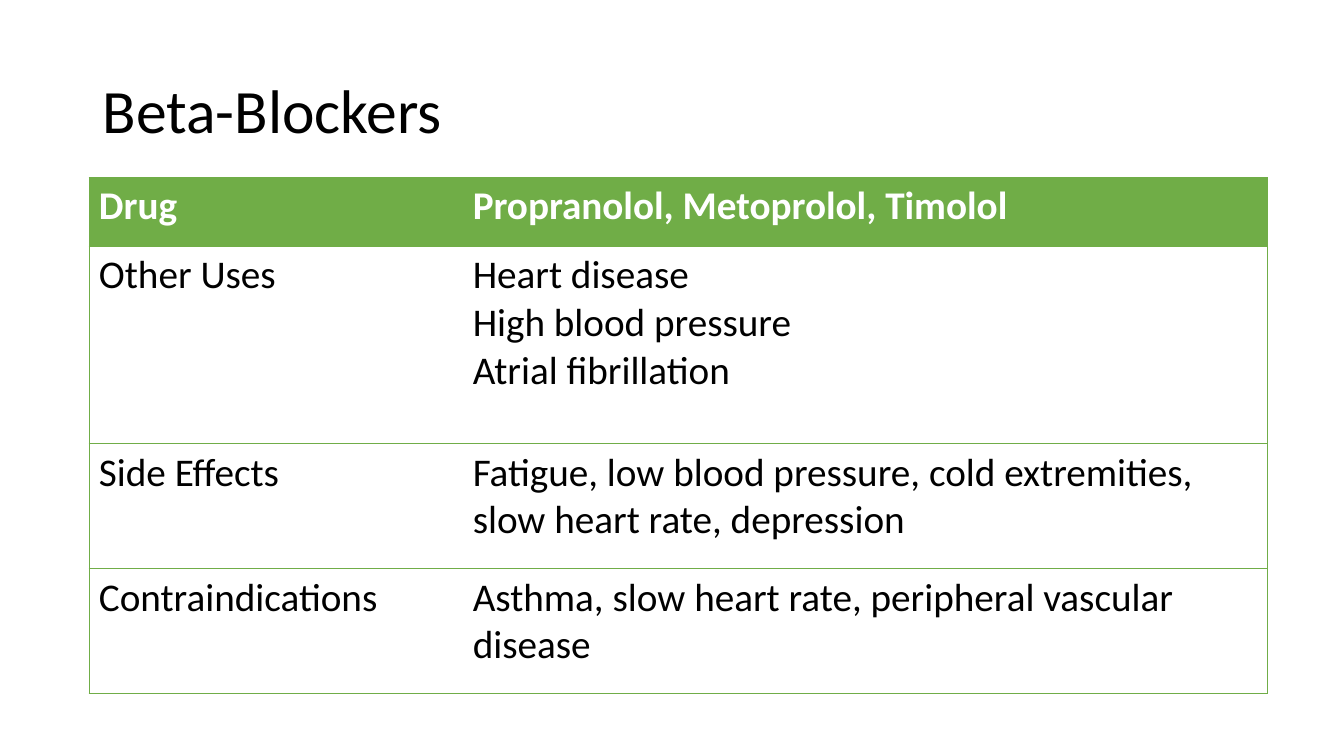
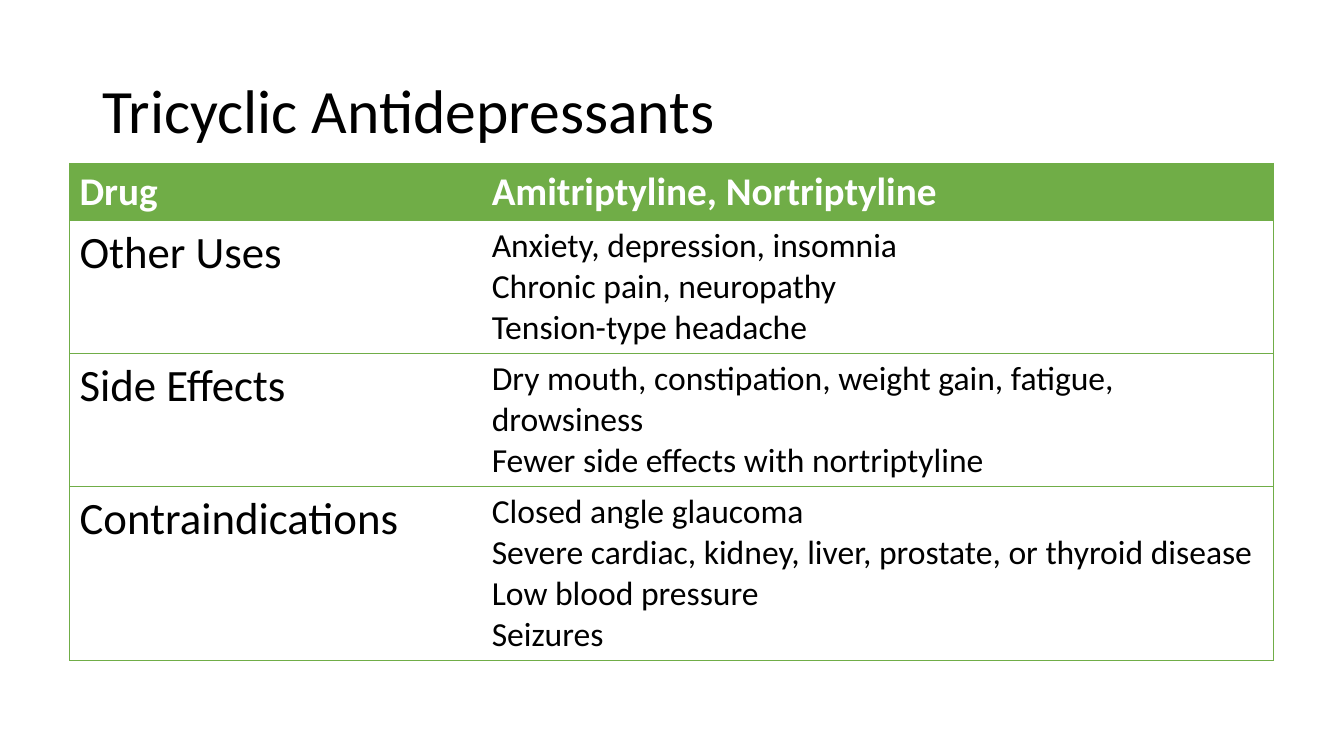
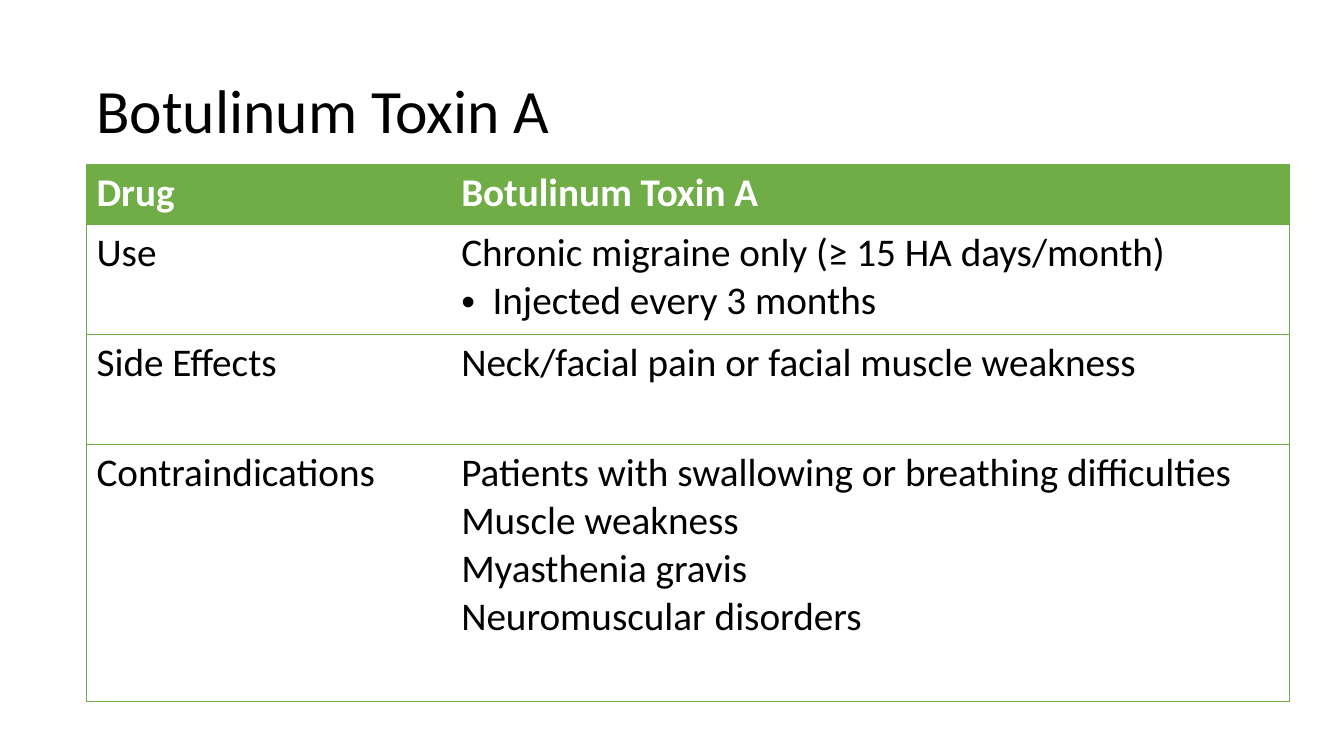
"""Build three slides on preventive migraine drugs, each a title over a two-column table."""
from lxml import etree
from pptx import Presentation, util as u
from pptx.dml.color import RGBColor
from pptx.enum import text
from pptx.oxml.ns import qn

COLORS = {"green": "70AD47", "black": "000000", "white": "FFFFFF"}
FONT = "Calibri"
BULLET = "•"

DRUG_SLIDES = [
    dict(
        title="Beta-Blockers", title_left=2.34, corner=(2.24, 4.47),
        widths=(9.42, 20.29), heights=(1.73, 4.98, 3.15, 3.15),
        rows=[
            ("Drug", ["Propranolol, Metoprolol, Timolol"]),
            ("Other Uses", ["Heart disease", "High blood pressure", "Atrial fibrillation"]),
            ("Side Effects", ["Fatigue, low blood pressure, cold extremities, slow heart rate, depression"]),
            ("Contraindications", ["Asthma, slow heart rate, peripheral vascular disease"]),
        ],
    ),
    dict(
        title="Tricyclic Antidepressants", title_left=2.34, corner=(1.75, 4.11),
        widths=(10.39, 19.94), heights=(1.45, 3.35, 3.35, 4.39),
        label_size=32, detail_size=24,
        rows=[
            ("Drug", ["Amitriptyline, Nortriptyline"]),
            ("Other Uses", ["Anxiety, depression, insomnia", "Chronic pain, neuropathy",
                            "Tension-type headache"]),
            ("Side Effects", ["Dry mouth, constipation, weight gain, fatigue, drowsiness",
                              "Fewer side effects with nortriptyline"]),
            ("Contraindications", ["Closed angle glaucoma",
                                   "Severe cardiac, kidney, liver, prostate, or thyroid disease",
                                   "Low blood pressure", "Seizures"]),
        ],
    ),
    dict(
        title="Botulinum Toxin A", title_left=2.18, corner=(2.18, 4.14),
        widths=(9.19, 21.11), heights=(1.52, 2.77, 2.77, 6.48),
        rows=[
            ("Drug", ["Botulinum Toxin A"]),
            ("Use", ["Chronic migraine only (≥ 15 HA days/month)", "•Injected every 3 months"]),
            ("Side Effects", ["Neck/facial pain or facial muscle weakness"]),
            ("Contraindications", ["Patients with swallowing or breathing difficulties", "Muscle weakness",
                                   "Myasthenia gravis", "Neuromuscular disorders"]),
        ],
    ),
]


def add_bullet(paragraph):
    properties = paragraph._p.get_or_add_pPr()
    indent = u.Cm(0.79)
    properties.set("marL", str(indent))
    properties.set("indent", str(-indent))
    etree.SubElement(properties, qn("a:buFont"), typeface="Arial")
    etree.SubElement(properties, qn("a:buChar"), char=BULLET)


def write(frame, lines, size=28, color="black", bold=False, spacing=None):
    for index, line in enumerate(lines):
        paragraph = frame.add_paragraph() if index else frame.paragraphs[0]
        if spacing:
            paragraph.line_spacing = spacing
        if line.startswith(BULLET):
            add_bullet(paragraph)
        run = paragraph.add_run()
        run.text = line.removeprefix(BULLET)
        run.font.name = FONT
        run.font.size = u.Pt(size)
        run.font.bold = bold
        run.font.color.rgb = RGBColor.from_string(COLORS[color])


def set_borders(cell, visible_edges):
    properties = cell._tc.get_or_add_tcPr()
    for position, edge in enumerate("LRTB"):
        border = etree.Element(qn(f"a:ln{edge}"), w=str(u.Pt(0.5)))
        if edge in visible_edges:
            fill = etree.SubElement(border, qn("a:solidFill"))
            etree.SubElement(fill, qn("a:srgbClr"), val=COLORS["green"])
        else:
            etree.SubElement(border, qn("a:noFill"))
        properties.insert(position, border)


def fill_cell(cell, lines, header, visible_edges, size):
    if header:
        cell.fill.solid()
        cell.fill.fore_color.rgb = RGBColor.from_string(COLORS["green"])
    else:
        cell.fill.background()
    set_borders(cell, visible_edges)
    write(cell.text_frame, lines, size=28 if header else size,
          color="white" if header else "black", bold=header)


def add_title(slide, title, left):
    frame = slide.shapes.add_textbox(u.Cm(left), u.Cm(1.02), u.Cm(29.21), u.Cm(3.68)).text_frame
    frame.word_wrap = True
    frame.vertical_anchor = text.MSO_ANCHOR.MIDDLE
    write(frame, [title], size=44, spacing=0.9)


def add_drug_table(slide, rows, corner, widths, heights, label_size=28, detail_size=28):
    left, top = map(u.Cm, corner)
    table = slide.shapes.add_table(len(rows), len(widths), left, top,
                                   u.Cm(sum(widths)), u.Cm(sum(heights))).table
    table.horz_banding = False
    for column, width in zip(table.columns, widths):
        column.width = u.Cm(width)
    for index, (label, details) in enumerate(rows):
        table.rows[index].height = u.Cm(heights[index])
        fill_cell(table.cell(index, 0), [label], index == 0, "LTB", label_size)
        fill_cell(table.cell(index, 1), details, index == 0, "RTB", detail_size)


def add_drug_slide(deck, title, title_left, **table_layout):
    slide = deck.slides.add_slide(deck.slide_layouts[6])
    add_title(slide, title, title_left)
    add_drug_table(slide, **table_layout)


def main():
    deck = Presentation()
    deck.slide_width, deck.slide_height = u.Cm(33.87), u.Cm(19.05)
    for drug_slide in DRUG_SLIDES:
        add_drug_slide(deck, **drug_slide)
    deck.save("out.pptx")


if __name__ == "__main__":
    main()
